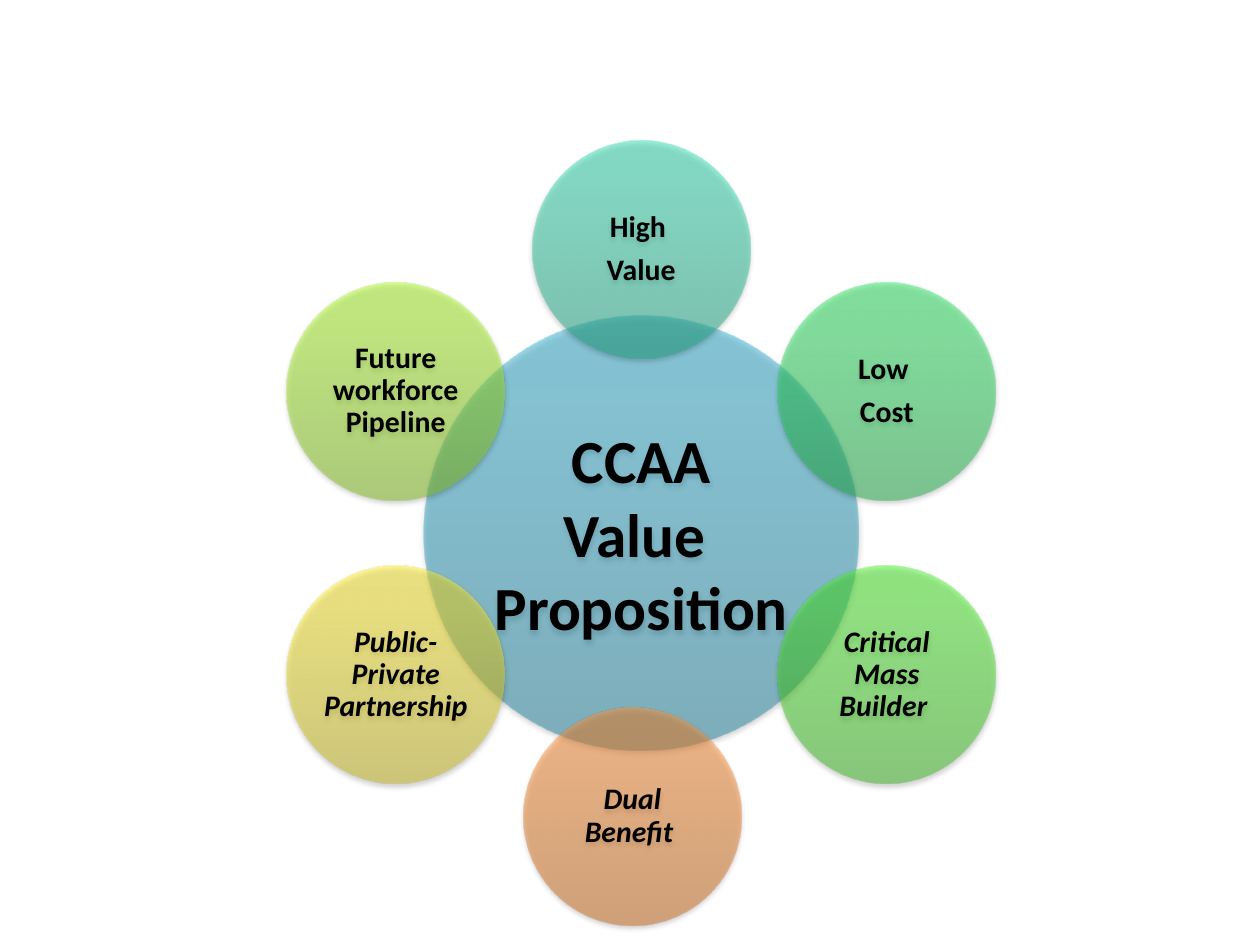
from dataclasses import dataclass
from math import cos, radians, sin

from lxml.etree import SubElement
from pptx import Presentation
from pptx.dml.color import RGBColor
from pptx.enum.shapes import MSO_SHAPE as Preset
from pptx.enum.text import MSO_ANCHOR as Anchor, PP_ALIGN as Align
from pptx.oxml.ns import qn
from pptx.util import Inches, Pt


@dataclass(frozen=True)
class Theme:
    font: str = "Calibri"
    text: str = "000000"
    shadow: str = "000000"
    hub_size: float = 35
    petal_size: float = 17
    opacity: int = 50
    shadow_opacity: int = 35
    stops: tuple[int, ...] = (0, 80, 100)


@dataclass(frozen=True)
class Circle:
    lines: tuple[str, ...]
    colors: tuple[str, str, str]
    center_x: float
    center_y: float
    diameter: float
    size: float
    inset: float
    italic: bool = False
    line_spacing: float = 1.0
    space_after: float = 0


@dataclass(frozen=True)
class Petal:
    lines: tuple[str, ...]
    colors: tuple[str, str, str]
    angle: float
    italic: bool = False
    shift_x: float = 0


THEME = Theme()
CENTER_X, CENTER_Y, ORBIT = 5.09, 4.23, 2.25

HUB = Circle(("CCAA", "Value ", "Proposition"), ("2A88A2", "37B1D2", "34B4D6"),
             CENTER_X, CENTER_Y, 3.45, THEME.hub_size, 0.05)

# Angles are degrees clockwise from the top.
PETALS = (
    Petal(("High ", "Value"), ("27AA89", "33DCB2", "30E1B5"), 0),
    Petal(("Low ", "Cost"), ("25B24E", "30E765", "2DEB64"), 60),
    Petal(("Critical Mass Builder ",), ("3CB923", "4EF02E", "4CF52A"), 120, True),
    Petal(("Future workforce Pipeline",), ("85C022", "ADF92C", "AFFE28"), 300),
    Petal(("Public-Private Partnership",), ("C6B821", "FFEC2D", "FFED2E"), 240, True),
    Petal(("Dual Benefit ",), ("CC6E20", "FF9034", "FF9136"), 180, True, -0.07),
)


def petal_circle(petal: Petal) -> Circle:
    """Place a petal on the orbit around the hub."""
    angle = radians(petal.angle)
    return Circle(petal.lines, petal.colors,
                  CENTER_X + ORBIT * sin(angle) + petal.shift_x,
                  CENTER_Y - ORBIT * cos(angle),
                  1.73, THEME.petal_size, 0.02, petal.italic, 0.9, 6)


def add_color(parent, color: str, opacity: int) -> None:
    element = SubElement(parent, qn("a:srgbClr"), val=color)
    SubElement(element, qn("a:alpha"), val=str(opacity * 1000))


def set_glass_look(shape, colors: tuple[str, str, str]) -> None:
    """Give a translucent bottom-to-top gradient and a soft shadow below."""
    shape.line.fill.background()
    shape.shadow.inherit = False
    shape.fill.gradient()
    gradient = shape._element.spPr.find(qn("a:gradFill"))
    for child in list(gradient):
        gradient.remove(child)
    stops = SubElement(gradient, qn("a:gsLst"))
    for position, color in zip(THEME.stops, colors):
        stop = SubElement(stops, qn("a:gs"), pos=str(position * 1000))
        add_color(stop, color, THEME.opacity)
    SubElement(gradient, qn("a:lin"), ang=str(270 * 60000), scaled="0")

    effects = shape._element.spPr.find(qn("a:effectLst"))
    shadow = SubElement(effects, qn("a:outerShdw"), blurRad=str(Pt(3.1)),
                        dist=str(Pt(1.8)), dir=str(90 * 60000), rotWithShape="0")
    add_color(shadow, THEME.shadow, THEME.shadow_opacity)


def draw_circle(slide, circle: Circle) -> None:
    radius = circle.diameter / 2
    shape = slide.shapes.add_shape(
        Preset.OVAL, Inches(circle.center_x - radius), Inches(circle.center_y - radius),
        Inches(circle.diameter), Inches(circle.diameter))
    set_glass_look(shape, circle.colors)

    frame = shape.text_frame
    frame.word_wrap = True
    frame.vertical_anchor = Anchor.MIDDLE
    frame.margin_left = frame.margin_right = Inches(circle.inset)
    frame.margin_top = frame.margin_bottom = Inches(circle.inset)
    for index, line in enumerate(circle.lines):
        paragraph = frame.paragraphs[0] if index == 0 else frame.add_paragraph()
        paragraph.text = line
        paragraph.alignment = Align.CENTER
        paragraph.line_spacing = circle.line_spacing
        paragraph.space_after = Pt(circle.space_after)
        font = paragraph.font
        font.name, font.size = THEME.font, Pt(circle.size)
        font.bold, font.italic = True, circle.italic
        font.color.rgb = RGBColor.from_string(THEME.text)


def main() -> None:
    presentation = Presentation()
    presentation.slide_width, presentation.slide_height = Inches(10), Inches(7.5)
    slide = presentation.slides.add_slide(presentation.slide_layouts[6])
    draw_circle(slide, HUB)
    for petal in PETALS:
        draw_circle(slide, petal_circle(petal))
    presentation.save("out.pptx")


if __name__ == "__main__":
    main()
